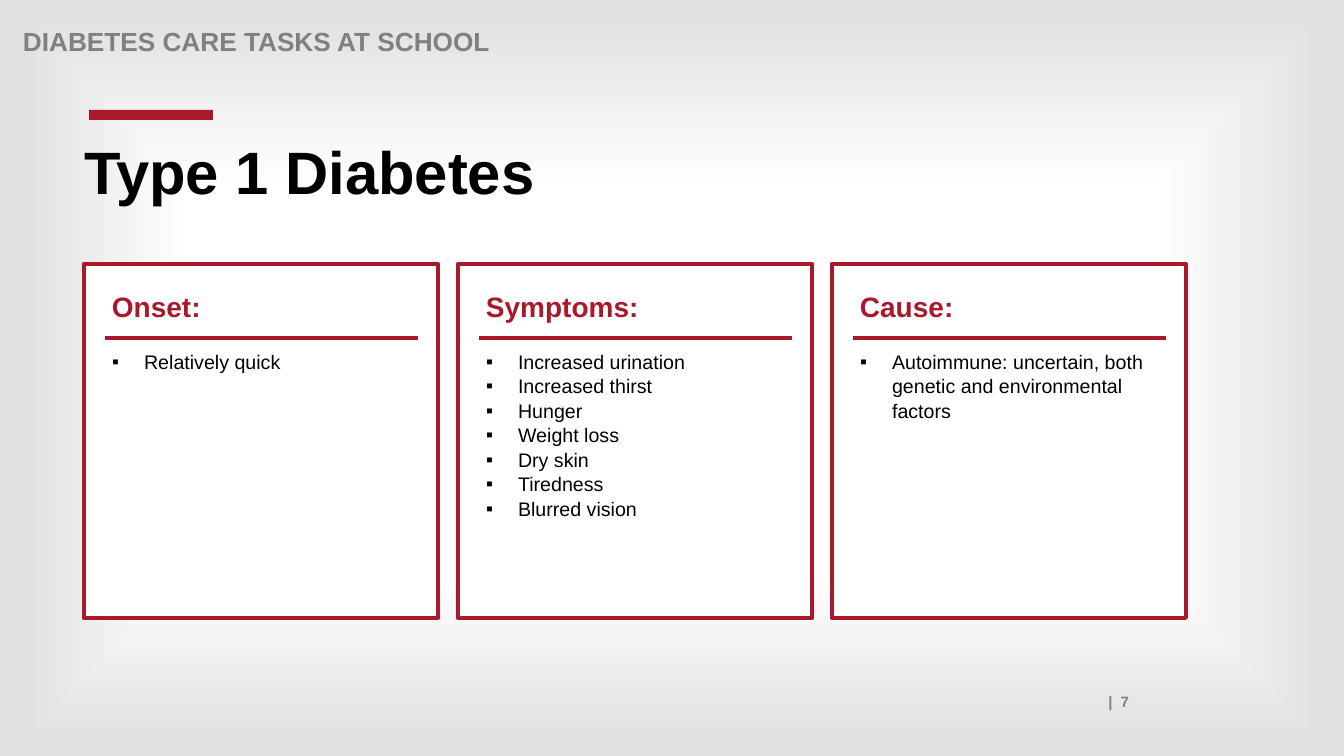
from pptx import Presentation
from pptx.dml.color import RGBColor
from pptx.enum.shapes import MSO_CONNECTOR as Conn, MSO_SHAPE as Shape
from pptx.enum.text import MSO_ANCHOR as Anchor, MSO_AUTO_SIZE as Auto, PP_ALIGN as Align
from pptx.oxml import parse_xml
from pptx.oxml.ns import nsdecls
from pptx.util import Pt

PX = 914400 / 100.8
RED, GREY, BLACK, WHITE = "AA182C", "808080", "000000", "FFFFFF"


def color(code):
    return RGBColor.from_string(code)


def write(box, place, lines, size, ink=BLACK, bold=False, space=1.0,
          align=Align.LEFT, bullet=None):
    box.left, box.top, box.width, box.height = [round(v * PX) for v in place]
    frame = box.text_frame
    frame.word_wrap = True
    frame.auto_size = Auto.NONE
    frame.vertical_anchor = Anchor.TOP
    frame.text = "\n".join(lines)
    for para in frame.paragraphs:
        para.alignment = align
        para.line_spacing = space
        para.space_before = para.space_after = Pt(0)
        if bullet:
            props = para._p.get_or_add_pPr()
            props.set("marL", str(round(32 * PX)))
            props.set("indent", str(round(-32 * PX)))
            props.append(parse_xml(f'<a:buFont {nsdecls("a")} typeface="Arial"/>'))
            props.append(parse_xml(f'<a:buChar {nsdecls("a")} char="{bullet}"/>'))
        font = para.runs[0].font
        font.name, font.size, font.bold = "Arial", Pt(size), bold
        font.color.rgb = color(ink)


deck = Presentation()
deck.slide_width, deck.slide_height = round(1344 * PX), round(756 * PX)
slide = deck.slides.add_slide(deck.slide_layouts.get_by_name("Comparison"))
shapes = slide.shapes
title, *bodies = slide.placeholders
spare = bodies.pop()
spare.element.getparent().remove(spare.element)

# Background: white centre fading to grey edges
slide.background.fill.gradient()
grad = slide.element.xpath(".//p:bgPr/a:gradFill")[0]
stops = "".join(
    f'<a:gs pos="{pos}000"><a:srgbClr val="{code}"/></a:gs>'
    for pos, code in [(12, WHITE), (50, WHITE), (98, "E0E0E0")])
grad.getparent().replace(grad, parse_xml(
    f'<a:gradFill {nsdecls("a")} rotWithShape="1"><a:gsLst>{stops}</a:gsLst>'
    '<a:path path="shape"><a:fillToRect l="50000" t="50000" r="50000" b="50000"/>'
    '</a:path></a:gradFill>'))

# Page number, header, accent bar and title
write(shapes.add_textbox(0, 0, 0, 0), (122, 688, 1017, 28), ["|  7"], 10.7,
      ink=GREY, bold=True, align=Align.RIGHT)
write(shapes.add_textbox(0, 0, 0, 0), (13, 24, 1109, 28),
      ["DIABETES CARE TASKS AT SCHOOL"], 18.7, ink=GREY, bold=True, space=0.9)
bar = shapes.add_shape(Shape.RECTANGLE, *[round(v * PX) for v in (89, 110, 124, 10)])
bar.shadow.inherit = False
bar.fill.solid()
bar.fill.fore_color.rgb = color(RED)
bar.line.fill.background()
write(title, (74, 138, 1112, 131), ["Type 1 Diabetes"], 42.7, bold=True, space=0.9)

# Three cards, each with a heading, a rule and a list
cards = [
    ("Onset:", ["Relatively quick"]),
    ("Symptoms:", ["Increased urination", "Increased thirst", "Hunger",
                   "Weight loss", "Dry skin", "Tiredness", "Blurred vision"]),
    ("Cause:", ["Autoimmune: uncertain, both genetic and environmental factors"]),
]
for i, (head, items) in enumerate(cards):
    left = 84 + 374 * i
    card = shapes.add_shape(Shape.RECTANGLE,
                            *[round(v * PX) for v in (left, 264, 354, 354)])
    card.shadow.inherit = False
    card.fill.solid()
    card.fill.fore_color.rgb = color(WHITE)
    write(shapes.add_textbox(0, 0, 0, 0), (left + 18, 288, 325, 42), [head], 20,
          ink=RED, bold=True, space=0.9)
    rule = shapes.add_connector(
        Conn.STRAIGHT, *[round(v * PX) for v in (left + 21, 338, left + 334, 338)])
    rule.element.spPr.append(parse_xml(f'<a:effectLst {nsdecls("a")}/>'))
    for part in (card, rule):
        part.line.color.rgb = color(RED)
        part.line.width = Pt(3)
    body = bodies[i]
    write(body, (left + 18, 344, 325, 73), items, 14, space=1.04, bullet="▪")
    card.element.getparent().append(body.element)  # bring the list in front of its card

deck.save("out.pptx")
